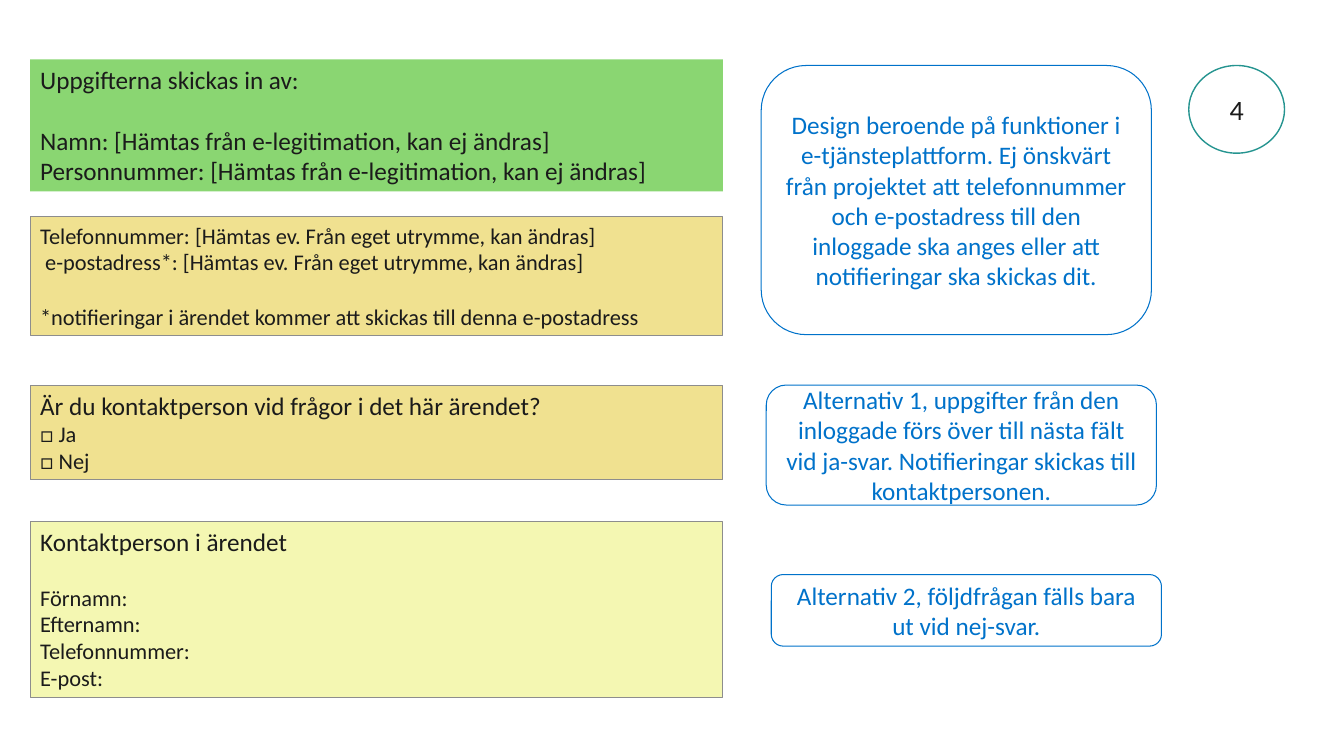
from pptx import Presentation
from pptx.dml.color import RGBColor
from pptx.enum.shapes import MSO_SHAPE
from pptx.enum.text import MSO_ANCHOR, MSO_AUTO_SIZE, PP_ALIGN
from pptx.util import Inches, Pt

RECT = MSO_SHAPE.RECTANGLE
ROUNDED = MSO_SHAPE.ROUNDED_RECTANGLE
OVAL = MSO_SHAPE.OVAL
LEFT, CENTER = PP_ALIGN.LEFT, PP_ALIGN.CENTER
TOP, MIDDLE = MSO_ANCHOR.TOP, MSO_ANCHOR.MIDDLE
FIT_SHAPE = MSO_AUTO_SIZE.SHAPE_TO_FIT_TEXT

FONT = "Calibri"
COLORS = {
    "text": "1B1B1B",
    "note": "0072CA",
    "border": "8D8D8D",
    "step": "259490",
    "white": "FFFFFF",
    "green": "8AD672",
    "sand": "F0E190",
    "yellow": "F4F7B2",
}
FORM_LEFT, FORM_WIDTH = 0.3, 6.87
NOTE_WIDTH = 3.87
LINE_HEIGHT = 1.22


def rgb(name):
    return RGBColor.from_string(COLORS[name])


def add_box(s, kind, left, top, width, height, fill=None, line=None, weight=0.5):
    sp = s.shapes.add_shape(kind, Inches(left), Inches(top), Inches(width), Inches(height))
    sp.shadow.inherit = False
    if fill:
        sp.fill.solid()
        sp.fill.fore_color.rgb = rgb(fill)
    else:
        sp.fill.background()
    if line:
        sp.line.color.rgb = rgb(line)
        sp.line.width = Pt(weight)
    else:
        sp.line.fill.background()
    sp.text_frame.word_wrap = True
    return sp


def write(p, text, size, color, align):
    p.text = text
    p.alignment = align
    p.font.name = FONT
    p.font.size = Pt(size)
    p.font.color.rgb = rgb(color)


def add_form_field(s, top, height, fill, lines, line="border", gap_before=None):
    sp = add_box(s, RECT, FORM_LEFT, top, FORM_WIDTH, height, fill, line)
    tf = sp.text_frame
    tf.auto_size = FIT_SHAPE
    tf.vertical_anchor = TOP
    for i, (text, size) in enumerate(lines):
        p = tf.paragraphs[0] if i == 0 else tf.add_paragraph()
        write(p, text, size, "text", LEFT)
        if i == gap_before:
            p.space_before = Pt(round(size * LINE_HEIGHT, 1))


def add_centered(s, kind, left, top, width, height, text, size, color, **style):
    sp = add_box(s, kind, left, top, width, height, **style)
    sp.text_frame.vertical_anchor = MIDDLE
    write(sp.text_frame.paragraphs[0], text, size, color, CENTER)


def add_note(s, left, top, height, text):
    add_centered(s, ROUNDED, left, top, NOTE_WIDTH, height, text, 18, "note",
                 line="note", weight=0.75)


def main():
    prs = Presentation()
    prs.slide_width, prs.slide_height = Inches(13.33), Inches(7.5)
    s = prs.slides.add_slide(prs.slide_layouts[6])

    add_form_field(s, 0.59, 1.31, "green", [
        ("Uppgifterna skickas in av:", 18),
        ("Namn: [Hämtas från e-legitimation, kan ej ändras]", 18),
        ("Personnummer: [Hämtas från e-legitimation, kan ej ändras]", 18),
    ], line=None, gap_before=1)
    add_form_field(s, 2.15, 1.18, "sand", [
        ("Telefonnummer: [Hämtas ev. Från eget utrymme, kan ändras]", 16),
        (" e-postadress*: [Hämtas ev. Från eget utrymme, kan ändras]", 16),
        ("*notifieringar i ärendet kommer att skickas till denna e-postadress", 16),
    ], gap_before=2)
    add_form_field(s, 3.82, 0.94, "sand", [
        ("Är du kontaktperson vid frågor i det här ärendet?", 18),
        ("□ Ja", 16),
        ("□ Nej", 16),
    ])
    add_form_field(s, 5.17, 1.75, "yellow", [
        ("Kontaktperson i ärendet", 18),
        ("Förnamn:", 16),
        ("Efternamn:", 16),
        ("Telefonnummer:", 16),
        ("E-post:", 16),
    ], gap_before=1)

    add_note(s, 7.55, 0.65, 2.67,
             "Design beroende på funktioner i e-tjänsteplattform. Ej önskvärt från "
             "projektet att telefonnummer och e-postadress till den inloggade ska "
             "anges eller att notifieringar ska skickas dit.")
    add_note(s, 7.6, 3.82, 1.19,
             "Alternativ 1, uppgifter från den inloggade förs över till nästa fält "
             "vid ja-svar. Notifieringar skickas till kontaktpersonen.")
    add_note(s, 7.65, 5.7, 0.71,
             "Alternativ 2, följdfrågan fälls bara ut vid nej-svar.")
    add_centered(s, OVAL, 11.79, 0.65, 0.95, 0.87, "4", 20, "text",
                 fill="white", line="step", weight=1)

    prs.save("out.pptx")


if __name__ == "__main__":
    main()
